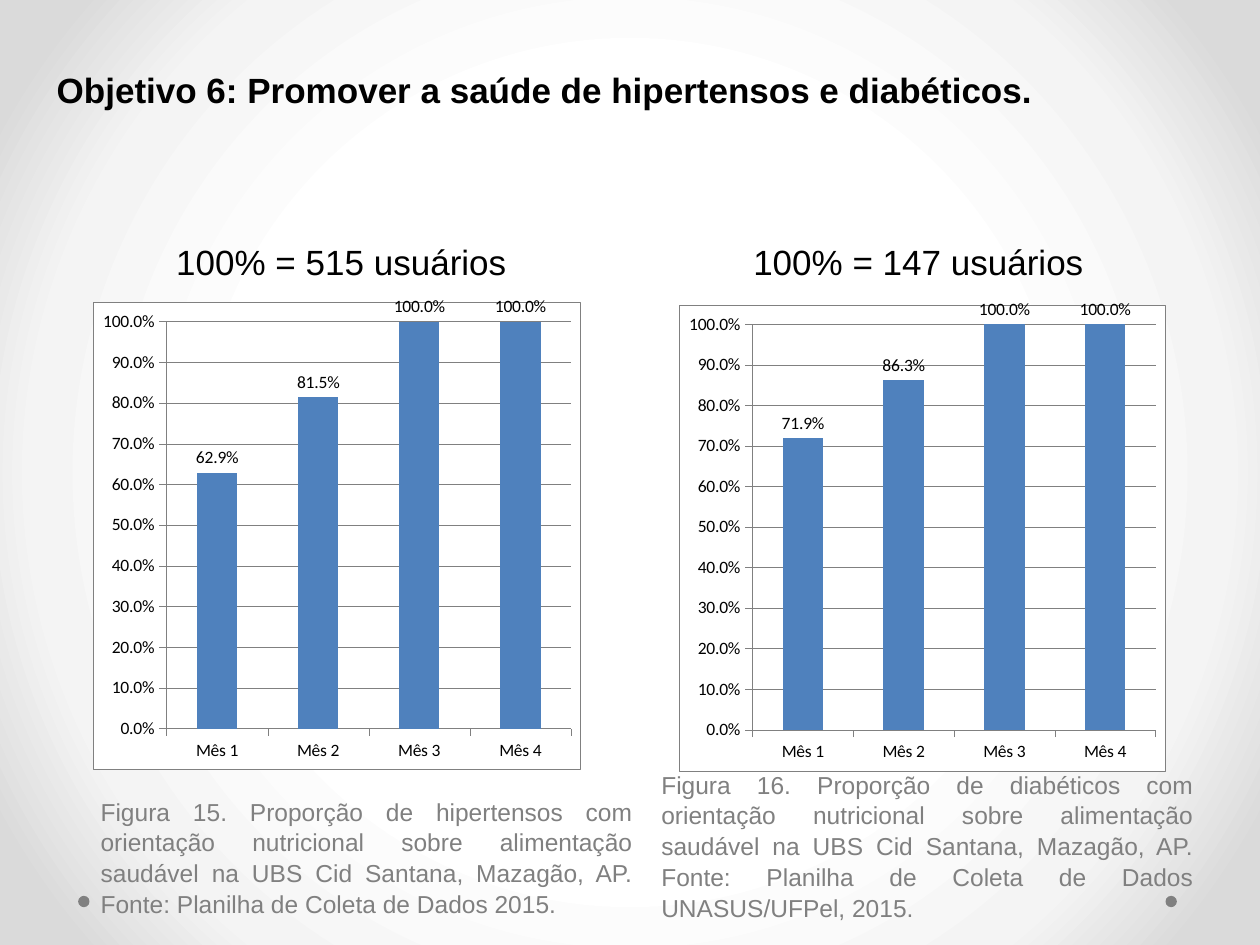
from lxml import etree
from pptx import Presentation
from pptx.chart.data import CategoryChartData
from pptx.dml.color import RGBColor
from pptx.enum.chart import XL_CHART_TYPE as Kind, XL_LABEL_POSITION as Spot
from pptx.enum.chart import XL_TICK_MARK as Tick
from pptx.enum.shapes import MSO_SHAPE as Shape
from pptx.enum.text import MSO_ANCHOR as Anchor, MSO_AUTO_SIZE as Fit
from pptx.enum.text import PP_ALIGN as Align
from pptx.oxml import parse_xml
from pptx.oxml.ns import nsdecls, qn
from pptx.util import Inches, Pt

COLORS = {"text": "000000", "gray": "808080", "bar": "4F81BD",
          "white": "FFFFFF", "pale": "F4F4F4", "edge": "DADADA"}
MONTHS = ["Mês 1", "Mês 2", "Mês 3", "Mês 4"]
LEFT = {
    "head": "100% = 515 usuários", "head_box": (0.5, 1.86, 4.42, 0.43),
    "vals": (0.629, 0.815, 1, 1), "chart_box": (0.74, 2.36, 3.87, 3.75),
    "note": "Figura 15. Proporção de hipertensos com orientação nutricional "
            "sobre alimentação saudável na UBS Cid Santana, Mazagão, AP. "
            "Fonte: Planilha de Coleta de Dados 2015.",
    "note_box": (0.7, 6.24, 4.42, 1.1)}
RIGHT = {
    "head": "100% = 147 usuários", "head_box": (5.08, 1.86, 4.42, 0.43),
    "vals": (0.719, 0.863, 1, 1), "chart_box": (5.39, 2.38, 3.86, 3.74),
    "note": "Figura 16. Proporção de diabéticos com orientação nutricional "
            "sobre alimentação saudável na UBS Cid Santana, Mazagão, AP. "
            "Fonte: Planilha de Coleta de Dados UNASUS/UFPel, 2015.",
    "note_box": (5.15, 6.27, 4.42, 1.1)}


def rgb(name):
    return RGBColor.from_string(COLORS[name])


def place(shape, box):
    shape.left, shape.top, shape.width, shape.height = map(Inches, box)


def write(shape, box, text, size, align, anchor, color="text", bold=False):
    place(shape, box)
    frame = shape.text_frame
    frame.text = text
    frame.word_wrap = True
    frame.auto_size = Fit.NONE
    frame.vertical_anchor = anchor
    para = frame.paragraphs[0]
    para.alignment = align
    font = para.font
    font.name, font.size, font.bold = "Arial", Pt(size), bold
    font.color.rgb = rgb(color)
    return para


def paint(slide):
    """Give the slide a round gradient, white at its centre."""
    stops = "".join(
        f'<a:gs pos="{pos}000"><a:srgbClr val="{COLORS[name]}"/></a:gs>'
        for pos, name in ((50, "white"), (76, "pale"), (92, "edge")))
    slide.background.fill.solid()
    props = slide._element.cSld.find(qn("p:bg")).find(qn("p:bgPr"))
    props.replace(props[0], parse_xml(
        f'<a:gradFill {nsdecls("a")} rotWithShape="1"><a:gsLst>{stops}</a:gsLst>'
        '<a:path path="circle"><a:fillToRect l="50000" t="50000" r="50000"'
        ' b="50000"/></a:path></a:gradFill>'))


def add_dot(slide, x, y):
    dot = slide.shapes.add_shape(Shape.OVAL, *map(Inches, (x, y, 0.09, 0.09)))
    dot.shadow.inherit = False
    dot.fill.solid()
    dot.fill.fore_color.rgb = rgb("gray")
    dot.line.fill.background()


def panel(line):
    """Return white chart-area properties with the given line content."""
    return parse_xml(
        f'<c:spPr {nsdecls("c", "a")}><a:solidFill><a:srgbClr '
        f'val="{COLORS["white"]}"/></a:solidFill><a:ln w="3175">{line}</a:ln>'
        '</c:spPr>')


def thin(line):
    line.color.rgb = rgb("gray")
    line.width = Pt(0.25)


def style(font):
    font.name, font.size = "Calibri", Pt(10)
    font.color.rgb = rgb("text")


def add_bars(slide, box, vals):
    data = CategoryChartData(number_format="0.0%")
    data.categories = MONTHS
    data.add_series("Series 1", vals)
    chart = slide.shapes.add_chart(
        Kind.COLUMN_CLUSTERED, *map(Inches, box), data).chart
    chart.has_legend = chart.has_title = False
    style(chart.font)
    for axis in (chart.category_axis, chart.value_axis):
        axis.major_tick_mark, axis.minor_tick_mark = Tick.OUTSIDE, Tick.NONE
        style(axis.tick_labels.font)
        thin(axis.format.line)
    scale = chart.value_axis
    scale.minimum_scale, scale.maximum_scale, scale.major_unit = 0, 1, 0.1
    scale.tick_labels.number_format = "0.0%"
    scale.tick_labels.number_format_is_linked = False
    thin(scale.major_gridlines.format.line)

    plot = chart.plots[0]
    plot.gap_width, plot.vary_by_categories = 150, False
    fill = plot.series[0].format.fill
    fill.solid()
    fill.fore_color.rgb = rgb("bar")
    plot.has_data_labels = True
    labels = plot.data_labels
    labels.show_value, labels.position = True, Spot.OUTSIDE_END
    labels.number_format, labels.number_format_is_linked = "0.0%", False
    style(labels.font)

    space = chart._chartSpace
    body = space.find(qn("c:chart"))
    body.addnext(panel(
        f'<a:solidFill><a:srgbClr val="{COLORS["gray"]}"/></a:solidFill>'))
    body.find(qn("c:plotArea")).append(panel("<a:noFill/>"))


def add_figure(slide, head, side):
    """Fill one half: heading, bar chart and caption."""
    write(head, side["head_box"], side["head"], 20, Align.CENTER, Anchor.BOTTOM)
    add_bars(slide, side["chart_box"], side["vals"])
    note = slide.shapes.add_textbox(0, 0, 0, 0)
    para = write(note, side["note_box"], side["note"], 14, Align.JUSTIFY,
                 Anchor.BOTTOM, "gray")
    para.line_spacing = 1.05


def main():
    deck = Presentation()
    deck.slide_width, deck.slide_height = Inches(10), Inches(7.5)
    slide = deck.slides.add_slide(deck.slide_layouts[4])
    paint(slide)
    for x in (0.62, 9.25):
        add_dot(slide, x, 7.11)
    write(slide.shapes.title, (0.35, 0.49, 9.29, 0.44),
          "Objetivo 6: Promover a saúde de hipertensos e diabéticos.",
          20, Align.LEFT, Anchor.TOP, bold=True)
    slots = {p.placeholder_format.idx: p for p in slide.placeholders}
    for idx, side in ((1, LEFT), (3, RIGHT)):
        add_figure(slide, slots[idx], side)
        spare = slots[idx + 1]._element
        spare.getparent().remove(spare)
    deck.save("out.pptx")


if __name__ == "__main__":
    main()
